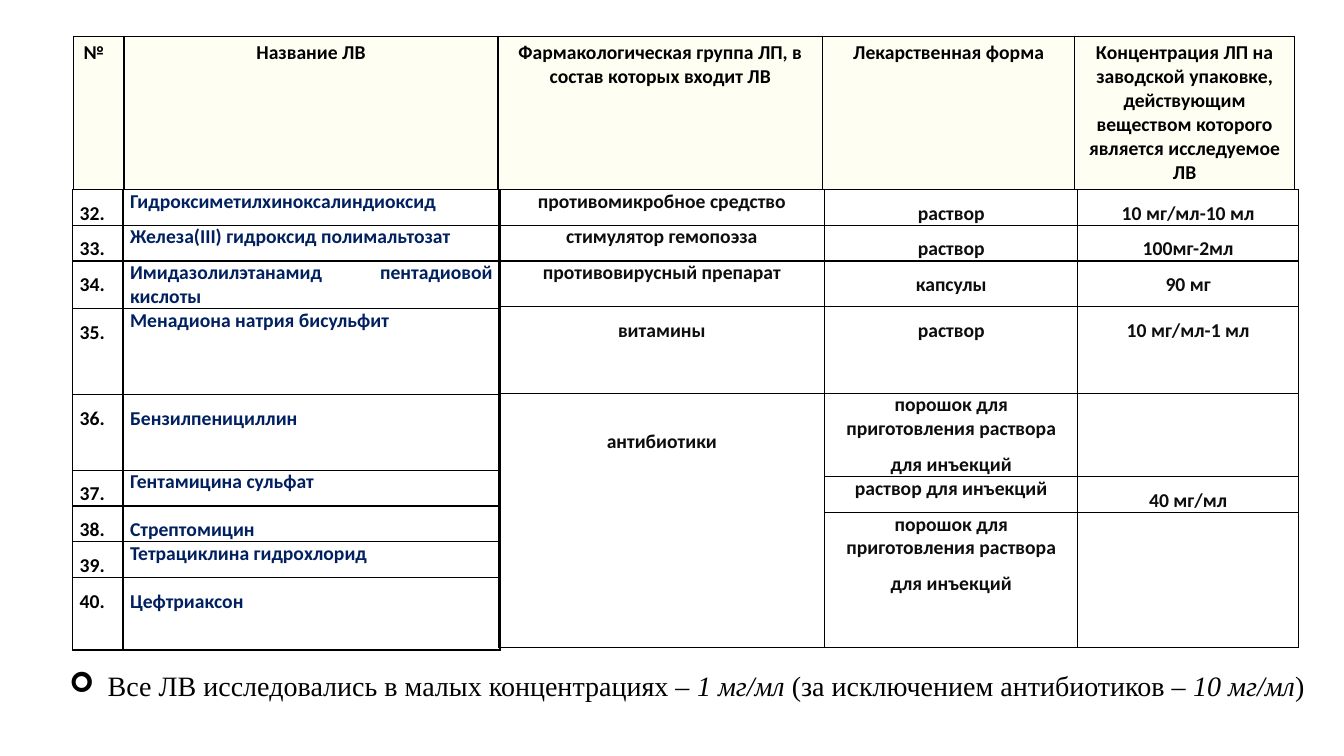
from lxml import etree
from pptx import Presentation
from pptx.dml.color import RGBColor
from pptx.enum.text import MSO_ANCHOR, PP_ALIGN
from pptx.oxml.ns import qn
from pptx.util import Inches, Pt

BLACK = RGBColor(0x00, 0x00, 0x00)
NAVY = RGBColor(0x00, 0x20, 0x60)
GRAPHITE = RGBColor(0x0D, 0x0D, 0x0D)
IVORY = RGBColor(0xFE, 0xFF, 0xF2)
JUSTIFY, CENTER = PP_ALIGN.JUSTIFY, PP_ALIGN.CENTER


class SlideBuilder:
    table_font, note_font = "Calibri", "Times New Roman"
    table_size, note_size = Pt(14), Pt(20)

    def __init__(self, slide):
        self.s = slide

    def table(self, left, top, widths, heights):
        frame = self.s.shapes.add_table(
            len(heights), len(widths), Inches(left), Inches(top),
            Inches(sum(widths)), Inches(sum(heights)))
        table = frame.table
        table.first_row = table.horz_banding = False
        for column, width in zip(table.columns, widths):
            column.width = Inches(width)
        for row, height in zip(table.rows, heights):
            row.height = Inches(height)
        for cell in table.iter_cells():
            cell.margin_left = cell.margin_right = Inches(0.07)
            cell.margin_top = cell.margin_bottom = 0
            self.borders(cell)
            cell.fill.background()
        return table

    def borders(self, cell):
        tcPr = cell._tc.get_or_add_tcPr()
        for side in ("a:lnL", "a:lnR", "a:lnT", "a:lnB"):
            ln = etree.SubElement(tcPr, qn(side), w=str(Pt(1)))
            fill = etree.SubElement(ln, qn("a:solidFill"))
            etree.SubElement(fill, qn("a:srgbClr"), val=str(BLACK))

    def cell_text(self, cell, text, color, align, loose=False):
        """Fill a cell; loose gives the last paragraph 1.5 line spacing."""
        tf = cell.text_frame
        tf.text = text
        for p in tf.paragraphs:
            p.alignment = align
            for r in p.runs:
                r.font.name, r.font.size = self.table_font, self.table_size
                r.font.bold = True
                r.font.color.rgb = color
        if loose:
            tf.paragraphs[-1].line_spacing = 1.5

    def bullet_note(self, left, top, width, height, parts):
        tf = self.s.shapes.add_textbox(
            Inches(left), Inches(top), Inches(width), Inches(height)).text_frame
        tf.word_wrap = True
        tf.vertical_anchor = MSO_ANCHOR.MIDDLE
        p = tf.paragraphs[0]
        p.line_spacing = 0.9
        pPr = p._p.get_or_add_pPr()
        pPr.set("marL", str(Inches(0.38)))
        pPr.set("indent", str(Inches(-0.38)))
        etree.SubElement(pPr, qn("a:buFont"), typeface="Wingdings")
        etree.SubElement(pPr, qn("a:buChar"), char="➢")
        for text, italic in parts:
            r = p.add_run()
            r.text = text
            r.font.name, r.font.size = self.note_font, self.note_size
            r.font.italic = italic
            r.font.color.rgb = BLACK


HEADERS = [
    "№", "Название ЛВ", "Фармакологическая группа ЛП, в состав которых входит ЛВ",
    "Лекарственная форма",
    "Концентрация ЛП на заводской упаковке, действующим веществом "
    "которого является исследуемое ЛВ",
]
# Name and whether it has loose line spacing
SUBSTANCES = [
    ("Гидроксиметилхиноксалиндиоксид", False),
    ("Железа(III) гидроксид полимальтозат", False),
    ("Имидазолилэтанамид пентадиовой кислоты", False),
    ("Менадиона натрия бисульфит", False),
    ("Бензилпенициллин", True),
    ("Гентамицина сульфат", False),
    ("Стрептомицин", True),
    ("Тетрациклина гидрохлорид", False),
    ("Цефтриаксон", True),
]
POWDER = "порошок для\nприготовления раствора\nдля инъекций"
# Group, form, concentration
PROPERTIES = [
    ("противомикробное средство", "раствор", "10 мг/мл-10 мл"),
    ("стимулятор гемопоэза", "раствор", "100мг-2мл"),
    ("противовирусный препарат", "капсулы", "90 мг"),
    ("витамины", "раствор", "10 мг/мл-1 мл"),
    ("антибиотики", POWDER, ""),
    ("", "раствор для инъекций", "40 мг/мл"),
    ("", POWDER, ""),
]
LOOSE_PROPERTIES = {"витамины", "антибиотики", "раствор", "капсулы", POWDER}


def main():
    prs = Presentation()
    prs.slide_width, prs.slide_height = Inches(13.33), Inches(7.5)
    builder = SlideBuilder(prs.slides.add_slide(prs.slide_layouts[6]))

    # Numbered substances
    names = builder.table(0.72, 1.88, [0.5, 3.74],
                          [0.35, 0.35, 0.46, 0.85, 0.75, 0.35, 0.35, 0.35, 0.72])
    for i, (name, loose) in enumerate(SUBSTANCES):
        builder.cell_text(names.cell(i, 0), f"{32 + i}.", BLACK, JUSTIFY, True)
        builder.cell_text(names.cell(i, 1), name, NAVY, JUSTIFY, loose)

    # Column headings
    header = builder.table(0.73, 0.36, [0.5, 3.71, 3.22, 2.5, 2.18], [1.5])
    for i, title in enumerate(HEADERS):
        cell = header.cell(0, i)
        cell.margin_left = cell.margin_right = Inches(0.1)
        cell.margin_top = cell.margin_bottom = Inches(0.05)
        cell.fill.solid()
        cell.fill.fore_color.rgb = IVORY
        builder.cell_text(cell, title, BLACK, CENTER if i else JUSTIFY)

    # Group, form and concentration
    details = builder.table(4.95, 1.88, [3.23, 2.51, 2.19],
                            [0.35, 0.35, 0.45, 0.86, 0.81, 0.35, 1.34])
    antibiotics = details.cell(4, 0)
    antibiotics.merge(details.cell(6, 0))
    antibiotics.margin_top = Inches(0.25)
    for i, row in enumerate(PROPERTIES):
        for j, text in enumerate(row):
            if text:
                loose = j == 2 or text in LOOSE_PROPERTIES
                builder.cell_text(details.cell(i, j), text, GRAPHITE, CENTER, loose)

    # Note on concentrations
    builder.bullet_note(0.59, 6.55, 12.61, 0.54, [
        ("Все ЛВ исследовались в малых концентрациях – ", False),
        ("1 мг/мл", True),
        (" (за исключением антибиотиков – ", False),
        ("10 мг/мл", True),
        (")", False),
    ])

    prs.save("out.pptx")


if __name__ == "__main__":
    main()
